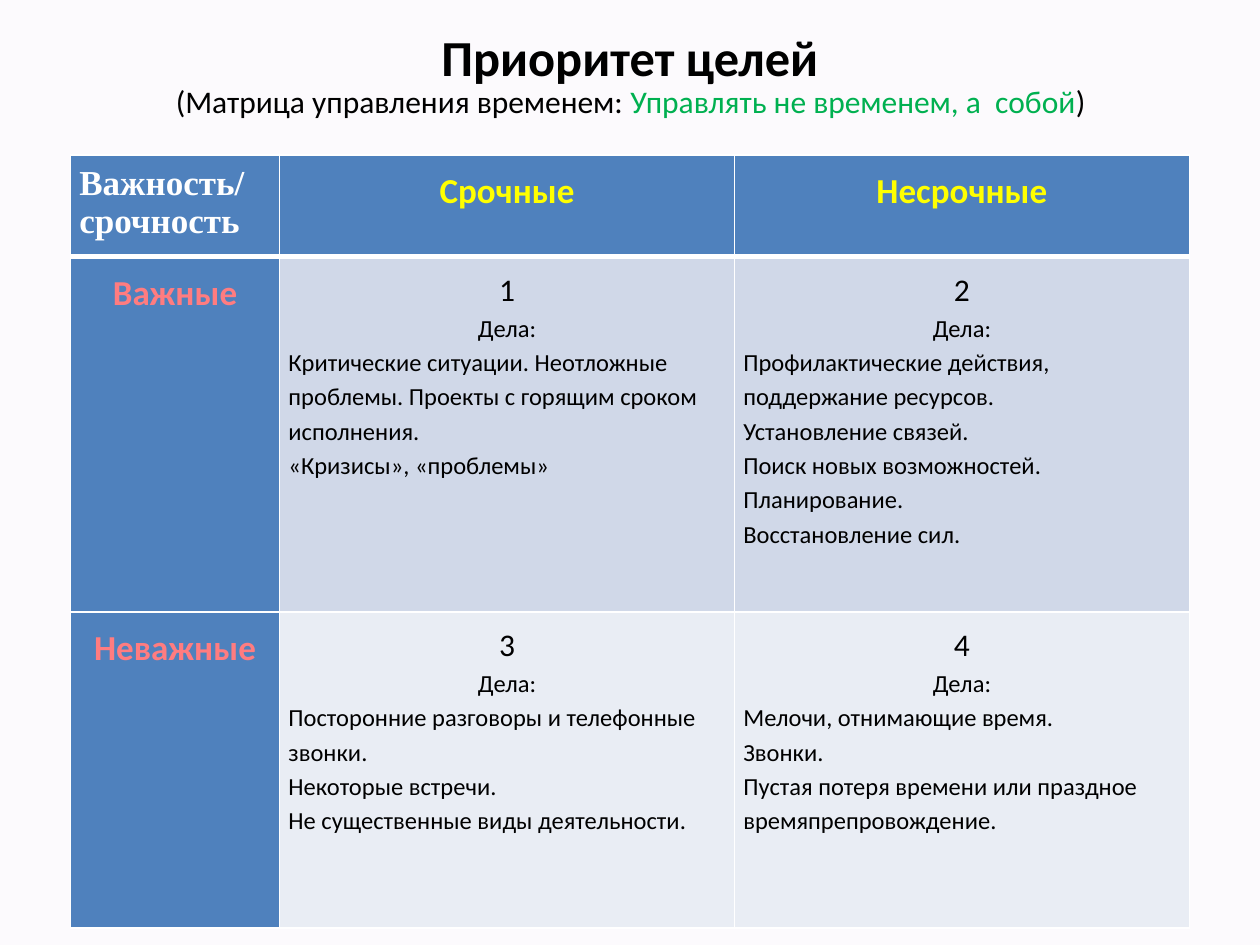
from lxml.etree import SubElement
from pptx import Presentation
from pptx.dml.color import RGBColor
from pptx.enum.text import MSO_ANCHOR as Anchor, PP_ALIGN as Align
from pptx.oxml.ns import qn
from pptx.util import Inches, Pt

COLORS = {
    "background": "FCFAFD",
    "text": "000000",
    "accent": "00B050",
    "header": "4F81BD",
    "important": "D0D8E8",
    "unimportant": "E9EDF4",
    "corner": "FFFFFF",
    "urgency": "FFFF00",
    "importance": "FF7C80",
    "border": "FFFFFF",
}

COLUMN_WIDTHS = [1.66, 3.61, 3.61]
ROW_HEIGHTS = [0.77, 2.82, 2.51]
URGENCIES = ["Срочные", "Несрочные"]

# Each row: label, fill, and the tasks of its two quadrants
MATRIX = [
    ("Важные", "important", [
        ["Критические ситуации. Неотложные проблемы. "
         "Проекты с горящим сроком исполнения.",
         "«Кризисы», «проблемы»"],
        ["Профилактические действия, поддержание ресурсов.",
         "Установление связей.",
         "Поиск новых возможностей.",
         "Планирование.",
         "Восстановление сил."],
    ]),
    ("Неважные", "unimportant", [
        ["Посторонние разговоры и телефонные звонки.",
         "Некоторые встречи.",
         "Не существенные виды деятельности."],
        ["Мелочи, отнимающие время.",
         "Звонки.",
         "Пустая потеря времени или праздное времяпрепровождение."],
    ]),
]


def rgb(name):
    return RGBColor.from_string(COLORS[name])


def style_font(font, size, color="text", bold=False, name="Calibri"):
    font.name = name
    font.size = Pt(size)
    font.bold = bold
    font.color.rgb = rgb(color)


def add_heading(slide, left, top, width, height, pieces, size, bold=False):
    """Add a centred line made of (text, colour) pieces."""
    heading = slide.shapes.add_textbox(
        Inches(left), Inches(top), Inches(width), Inches(height))
    frame = heading.text_frame
    frame.word_wrap = True
    frame.vertical_anchor = Anchor.MIDDLE
    line = frame.paragraphs[0]
    line.alignment = Align.CENTER
    for text, color in pieces:
        run = line.add_run()
        run.text = text
        style_font(run.font, size, color, bold)


def set_borders(cell, top=1, bottom=1):
    """Draw the cell's borders; widths are in points."""
    properties = cell._tc.get_or_add_tcPr()
    widths = {"a:lnL": 1, "a:lnR": 1, "a:lnT": top, "a:lnB": bottom}
    for position, (side, width) in enumerate(widths.items()):
        border = SubElement(properties, qn(side), w=str(Pt(width)))
        fill = SubElement(border, qn("a:solidFill"))
        SubElement(fill, qn("a:srgbClr"), val=COLORS["border"])
        properties.insert(position, border)


def prepare_cell(cell, fill, **borders):
    cell.fill.solid()
    cell.fill.fore_color.rgb = rgb(fill)
    cell.margin_left = cell.margin_right = Inches(0.07)
    cell.margin_top = cell.margin_bottom = Inches(0.07)
    set_borders(cell, **borders)


def write_label(cell, text, color):
    label = cell.text_frame.paragraphs[0]
    label.text = text
    label.alignment = Align.CENTER
    label.line_spacing = 1.15
    style_font(label.font, 20, color, bold=True)


def write_quadrant(cell, number, tasks):
    frame = cell.text_frame
    frame.text = "\n".join([str(number), "Дела:", *tasks])
    for index, paragraph in enumerate(frame.paragraphs):
        paragraph.alignment = Align.CENTER if index < 2 else Align.LEFT
        paragraph.line_spacing = 1.15
        style_font(paragraph.font, 18 if index == 0 else 14)


def add_matrix(slide):
    matrix = slide.shapes.add_table(
        len(ROW_HEIGHTS), len(COLUMN_WIDTHS), Inches(0.56), Inches(1.23),
        Inches(sum(COLUMN_WIDTHS)), Inches(sum(ROW_HEIGHTS))).table
    matrix.horz_banding = False
    for column, width in zip(matrix.columns, COLUMN_WIDTHS):
        column.width = Inches(width)
    for row, height in zip(matrix.rows, ROW_HEIGHTS):
        row.height = Inches(height)

    # Header row
    for column in range(len(COLUMN_WIDTHS)):
        prepare_cell(matrix.cell(0, column), "header", bottom=3)
    corner = matrix.cell(0, 0).text_frame.paragraphs[0]
    corner.text = "Важность/ срочность"
    style_font(corner.font, 20, "corner", bold=True, name="Times New Roman")
    for column, urgency in enumerate(URGENCIES, 1):
        write_label(matrix.cell(0, column), urgency, "urgency")

    # Importance rows with numbered quadrants
    for row, (importance, fill, quadrants) in enumerate(MATRIX, 1):
        top = 3 if row == 1 else 1
        label = matrix.cell(row, 0)
        prepare_cell(label, "header", top=top)
        write_label(label, importance, "importance")
        for column, tasks in enumerate(quadrants, 1):
            quadrant = matrix.cell(row, column)
            prepare_cell(quadrant, fill, top=top)
            number = (row - 1) * len(URGENCIES) + column
            write_quadrant(quadrant, number, tasks)


def main():
    presentation = Presentation()
    presentation.slide_width = Inches(10)
    presentation.slide_height = Inches(7.5)
    slide = presentation.slides.add_slide(presentation.slide_layouts[6])
    slide.background.fill.solid()
    slide.background.fill.fore_color.rgb = rgb("background")

    # Title and subtitle
    add_heading(slide, 0.5, 0.21, 9, 0.47,
                [("Приоритет целей", "text")], 28.8, bold=True)
    add_heading(slide, 0.83, 0.6, 8.35, 0.4, [
        ("(Матрица управления временем: ", "text"),
        ("Управлять не временем, а  собой", "accent"),
        (")", "text"),
    ], 18)

    # Time management matrix
    add_matrix(slide)
    presentation.save("out.pptx")


if __name__ == "__main__":
    main()
